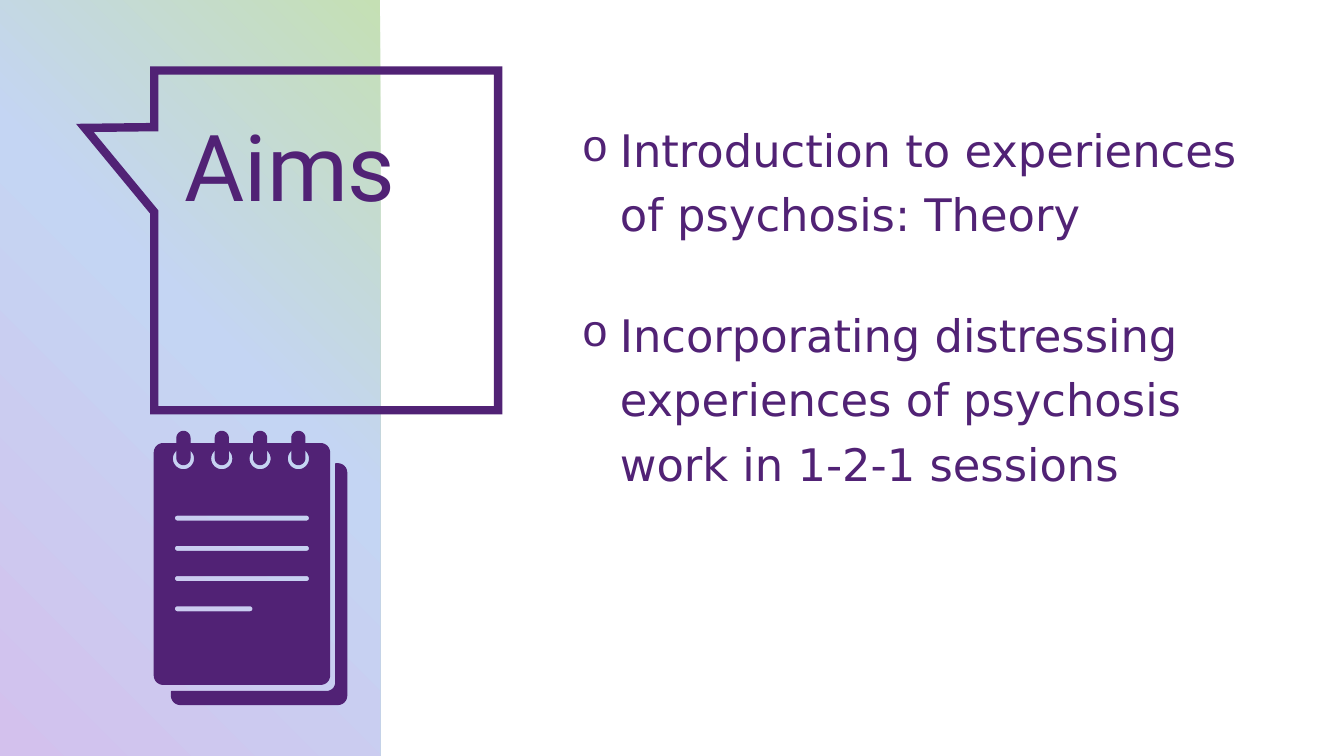
from math import cos, radians, sin

from lxml import etree
from pptx import Presentation
from pptx.dml.color import RGBColor
from pptx.enum.shapes import MSO_SHAPE
from pptx.oxml import parse_xml
from pptx.oxml.ns import nsdecls, qn
from pptx.util import Inches, Pt

TITLE = "Aims"
AIMS = [
    "Introduction to experiences of psychosis: Theory",
    "Incorporating distressing experiences of psychosis work in 1-2-1 sessions",
]
PURPLE = RGBColor(0x51, 0x22, 0x75)
PANEL_STOPS = [
    (0, RGBColor(0xD3, 0xC1, 0xED)),
    (56, RGBColor(0xC4, 0xD5, 0xF3)),
    (100, RGBColor(0xC5, 0xE0, 0xB4)),
]
WIDTH, HEIGHT = 13.33, 7.5
UNITS = 1000  # outline units per inch

# Notepad, in inches
COVER_X, COVER_Y, COVER_W, COVER_H = 1.53, 4.4, 1.74, 2.39
CORNER = 0.09
SHEET_DX, SHEET_DY = 0.17, 0.2
GAP_X, GAP_Y = 0.06, 0.07
RING_COUNT, RING_X, RING_STEP = 4, 1.82, 0.38
RING_Y, PIN_W, PIN_H = 4.28, 0.13, 0.33
HOLE_Y, HOLE_R = 4.55, 0.11
RULE_X, RULE_Y, RULE_STEP, RULE_H = 1.73, 5.11, 0.3, 0.06
RULE_WIDTHS = [1.34, 1.34, 1.34, 0.78]


def arc(cx, cy, r, start, end):
    """Points on a circle; angles in degrees, clockwise from the right."""
    return [(cx + r * cos(radians(start + (end - start) * i / 8)),
             cy + r * sin(radians(start + (end - start) * i / 8)))
            for i in range(9)]


def rounded(x, y, w, h, r):
    return (arc(x + w - r, y + r, r, -90, 0)
            + arc(x + w - r, y + h - r, r, 0, 90)
            + arc(x + r, y + h - r, r, 90, 180)
            + arc(x + r, y + r, r, 180, 270))


def add_outline(s, contours):
    """Add one filled shape; contours inside the first become holes."""
    first, *holes = [[(x * UNITS, y * UNITS) for x, y in c] for c in contours]
    builder = s.shapes.build_freeform(*first[0], scale=Inches(1) / UNITS)
    builder.add_line_segments(first[1:], close=True)
    for hole in holes:
        builder.move_to(*hole[0])
        builder.add_line_segments(hole[1:], close=True)
    sp = builder.convert_to_shape()
    sp.shadow.inherit = False
    sp.fill.solid()
    sp.fill.fore_color.rgb = PURPLE
    sp.line.color.rgb = PURPLE
    sp.line.width = Pt(0.75)


def add_panel(s):
    sp = s.shapes.add_shape(MSO_SHAPE.RECTANGLE, 0, 0, Inches(3.77), Inches(HEIGHT))
    sp.shadow.inherit = False
    sp.line.fill.background()
    stops = "".join(f'<a:gs pos="{pos * 1000}"><a:srgbClr val="{color}"/></a:gs>'
                    for pos, color in PANEL_STOPS)
    gradient = parse_xml(
        f'<a:gradFill {nsdecls("a")} rotWithShape="1"><a:gsLst>{stops}</a:gsLst>'
        '<a:path path="circle"><a:fillToRect t="100000" r="100000"/></a:path>'
        '</a:gradFill>')
    sp.element.spPr.find(qn("a:prstGeom")).addnext(gradient)


def add_callout(s):
    sp = s.shapes.add_shape(MSO_SHAPE.RECTANGULAR_CALLOUT, Inches(1.53), Inches(0.7),
                            Inches(3.41), Inches(3.37))
    sp.adjustments[0], sp.adjustments[1] = -0.702, -0.331
    sp.shadow.inherit = False
    sp.fill.background()
    sp.line.color.rgb = PURPLE
    sp.line.width = Pt(6)
    etree.SubElement(sp.element.spPr.find(qn("a:ln")), qn("a:miter"), lim="800000")


def style(p, font, size, spacing):
    p.font.name = font
    p.font.size = Pt(size)
    p.font.color.rgb = PURPLE
    p.line_spacing = spacing


def add_title(s):
    tf = s.shapes.add_textbox(Inches(1.73), Inches(1.11), Inches(2.73), Inches(1.27)).text_frame
    tf.word_wrap = True
    tf.margin_left = tf.margin_right = tf.margin_top = tf.margin_bottom = Inches(0.1)
    tf.text = TITLE
    style(tf.paragraphs[0], "Roboto", 66, 0.9)


def add_aims(s):
    tf = s.shapes.add_textbox(Inches(5.48), Inches(1.06), Inches(7.4), Inches(3.9)).text_frame
    tf.word_wrap = True
    for i, aim in enumerate(AIMS):
        p = tf.add_paragraph() if i else tf.paragraphs[0]
        p.text = aim
        style(p, "DejaVu Sans", 32, 1.2)
        if i:
            p.space_before = Pt(40)
        pPr = p._p.get_or_add_pPr()
        pPr.set("marL", str(Inches(0.57)))
        pPr.set("indent", str(Inches(-0.38)))
        run_style = pPr.find(qn("a:defRPr"))
        run_style.addprevious(etree.Element(qn("a:buFont"), typeface="Courier New"))
        run_style.addprevious(etree.Element(qn("a:buChar"), char="o"))


def add_notepad(s):
    right, bottom = COVER_X + COVER_W, COVER_Y + COVER_H
    sheet_x, sheet_y = COVER_X + SHEET_DX, COVER_Y + SHEET_DY
    sheet_right, sheet_bottom = right + SHEET_DX, bottom + SHEET_DY
    r = CORNER
    add_outline(s, [
        [(right + GAP_X, sheet_y)]
        + arc(right + GAP_X - r, bottom + GAP_Y - r, r, 0, 90)
        + [(sheet_x, bottom + GAP_Y)]
        + arc(sheet_x + r, sheet_bottom - r, r, 180, 90)
        + arc(sheet_right - r, sheet_bottom - r, r, 90, 0)
        + arc(sheet_right - r, sheet_y + r, r, 0, -90)])

    ring_centres = [RING_X + i * RING_STEP for i in range(RING_COUNT)]
    for cx in ring_centres:
        add_outline(s, [rounded(cx - PIN_W / 2, RING_Y, PIN_W, PIN_H, PIN_W / 2)])

    holes = [rounded(cx - HOLE_R, HOLE_Y - HOLE_R, 2 * HOLE_R, 2 * HOLE_R, HOLE_R)
             for cx in ring_centres]
    rules = [rounded(RULE_X, RULE_Y + i * RULE_STEP, w, RULE_H, RULE_H / 2)
             for i, w in enumerate(RULE_WIDTHS)]
    add_outline(s, [rounded(COVER_X, COVER_Y, COVER_W, COVER_H, r)] + holes + rules)


def main():
    prs = Presentation()
    prs.slide_width, prs.slide_height = Inches(WIDTH), Inches(HEIGHT)
    s = prs.slides.add_slide(prs.slide_layouts[6])
    add_panel(s)
    add_callout(s)
    add_title(s)
    add_aims(s)
    add_notepad(s)
    prs.save("out.pptx")


if __name__ == "__main__":
    main()
